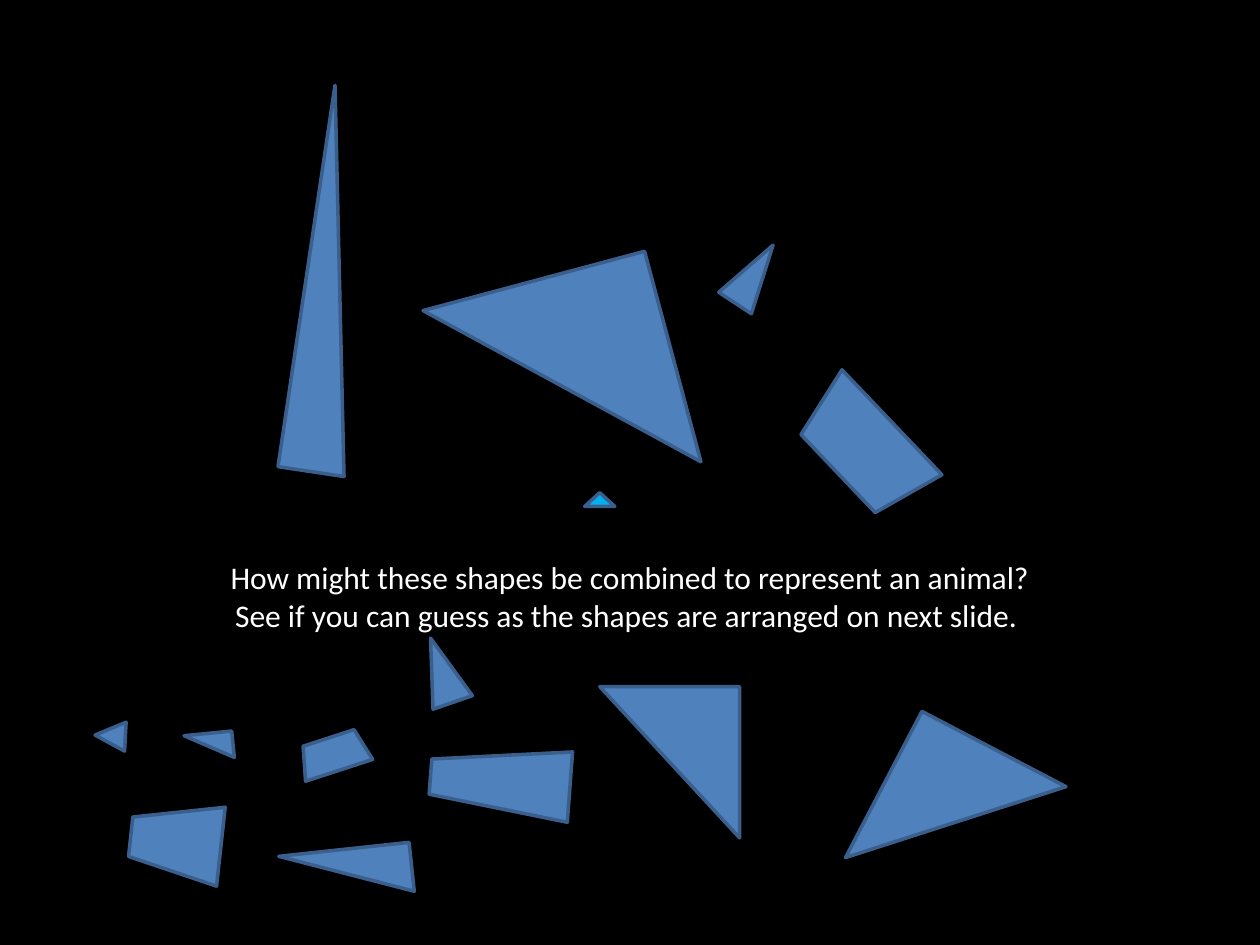
"""Build a puzzle slide of loose shapes that can form an animal."""
from pptx import Presentation
from pptx.dml.color import RGBColor
from pptx.enum.shapes import MSO_SHAPE as Kind
from pptx.enum.text import MSO_AUTO_SIZE as Fit, PP_ALIGN as Align
from pptx.util import Inches, Pt

BLACK, WHITE, BLUE, EDGE, SKY = "000000", "FFFFFF", "4F81BD", "3A5F8C", "00B0F0"
TRI, RIGHT, TRAP = Kind.ISOSCELES_TRIANGLE, Kind.RIGHT_TRIANGLE, Kind.TRAPEZOID

PIECES = [
    (TRI, (5.83, 1.9, 0.31, 0.55), 33.3, BLUE),
    (TRAP, (1.08, 6.32, 0.63, 0.72), 276.3, BLUE),
    (TRI, (0.76, 5.72, 0.23, 0.24), 273, BLUE),
    (TRI, (4.64, 3.91, 0.24, 0.11), 0, SKY),
    (TRAP, (6.29, 3.26, 1.15, 0.59), 226.4, BLUE),
    (TRI, (3.34, 5.05, 0.33, 0.54), 341, BLUE),
    (RIGHT, (4.76, 5.45, 1.11, 1.2), 180, BLUE),
    (RIGHT, (3.55, 2.2, 1.82, 1.73), 165, BLUE),
    (RIGHT, (2.23, 6.74, 1.04, 0.39), 173.9, BLUE),
    (RIGHT, (2.43, 0.7, 0.53, 3.06), 8.5, BLUE),
    (RIGHT, (6.93, 5.88, 1.31, 1.29), 117.6, BLUE),
    (TRAP, (3.69, 5.65, 0.56, 1.11), 274.3, BLUE),
    (TRAP, (2.37, 5.85, 0.56, 0.27), 342, BLUE),
    (RIGHT, (1.47, 5.82, 0.38, 0.21), 174.4, BLUE),
]
PROMPT = [
    "How might these shapes be combined to represent an animal?",
    "See if you can guess as the shapes are arranged on next slide. ",
]


def paint(color, code):
    color.rgb = RGBColor.from_string(code)


def add_piece(slide, kind, place, turn, fill):
    piece = slide.shapes.add_shape(kind, *map(Inches, place))
    piece.rotation = turn
    piece.shadow.inherit = False
    piece.fill.solid()
    paint(piece.fill.fore_color, fill)
    paint(piece.line.color, EDGE)
    piece.line.width = Pt(2)


def add_prompt(slide):
    box = slide.shapes.add_textbox(*map(Inches, (0, 4.38, 10, 0.71)))
    frame = box.text_frame
    frame.word_wrap = True
    frame.auto_size = Fit.SHAPE_TO_FIT_TEXT
    frame.text = "\n".join(PROMPT)
    for para in frame.paragraphs:
        para.alignment = Align.CENTER
        for run in para.runs:
            run.font.name = "Calibri"
            run.font.size = Pt(18)
            paint(run.font.color, WHITE)


def main():
    deck = Presentation()
    deck.slide_width, deck.slide_height = Inches(10), Inches(7.5)
    slide = deck.slides.add_slide(deck.slide_layouts[6])
    slide.background.fill.solid()
    paint(slide.background.fill.fore_color, BLACK)
    for piece in PIECES:
        add_piece(slide, *piece)
    add_prompt(slide)
    deck.save("out.pptx")


if __name__ == "__main__":
    main()
